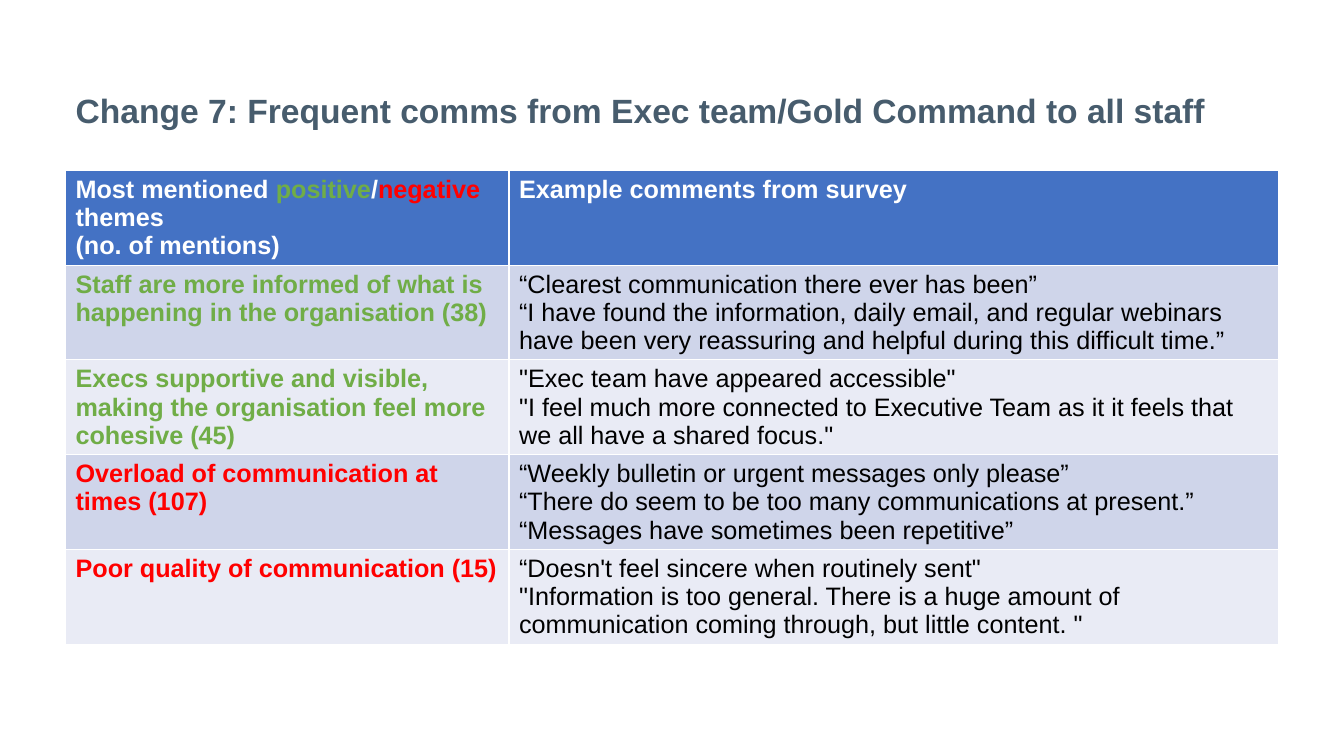
import pptx
import pptx.util
import pptx.dml.color
import pptx.enum.text

Pt = pptx.util.Pt


def color(value):
    return pptx.dml.color.RGBColor.from_string(value)


WHITE, BLACK, GREEN, RED = "FFFFFF", "000000", "70AD47", "FF0000"
HEADER_FILL, BAND_FILLS = "4472C4", ["CFD5EA", "E9EBF5"]

presentation = pptx.Presentation()
presentation.slide_width = Pt(960)
presentation.slide_height = Pt(540)
slide = presentation.slides.add_slide(presentation.slide_layouts[5])

title = slide.shapes.title
title.left, title.top, title.width, title.height = Pt(46.8), Pt(42.5), Pt(866.2), Pt(104.4)
title.text_frame.text = "Change 7: Frequent comms from Exec team/Gold Command to all staff"
title.text_frame.vertical_anchor = pptx.enum.text.MSO_ANCHOR.MIDDLE
title.text_frame.margin_bottom = Pt(32)
paragraph = title.text_frame.paragraphs[0]
paragraph.alignment = pptx.enum.text.PP_ALIGN.LEFT
paragraph.line_spacing = 0.9
paragraph.font.name = "Arial"
paragraph.font.size = Pt(24)
paragraph.font.bold = True
paragraph.font.color.rgb = color("475C6D")

header_theme = [
    [("Most mentioned ", WHITE), ("positive", GREEN), ("/", WHITE), ("negative", RED), (" themes", WHITE)],
    [("(no. of mentions)", WHITE)],
]
header_comments = [[("Example comments from survey", WHITE)]]

themes = [
    ("Staff are more informed of what is happening in the organisation (38)", GREEN, [
        "“Clearest communication there ever has been”",
        "“I have found the information, daily email, and regular webinars have been very reassuring and helpful during this difficult time.”",
    ]),
    ("Execs supportive and visible, making the organisation feel more cohesive (45)", GREEN, [
        '"Exec team have appeared accessible"',
        '"I feel much more connected to Executive Team as it it feels that we all have a shared focus."',
    ]),
    ("Overload of communication at times (107)", RED, [
        "“Weekly bulletin or urgent messages only please”",
        "“There do seem to be too many communications at present.”",
        "“Messages have sometimes been repetitive”",
    ]),
    ("Poor quality of communication (15)", RED, [
        "“Doesn't feel sincere when routinely sent\"",
        '"Information is too general. There is a huge amount of communication coming through, but little content. "',
    ]),
]

rows = [(header_theme, header_comments)]
for theme, theme_color, comments in themes:
    rows.append(([[(theme, theme_color)]], [[(comment, BLACK)] for comment in comments]))

table = slide.shapes.add_table(len(rows), 2, Pt(46.8), Pt(121.7), Pt(866.2), Pt(67.6 * len(rows))).table
table.columns[0].width = Pt(316.8)
table.columns[1].width = Pt(549.4)

for row_index, row in enumerate(rows):
    for column_index, lines in enumerate(row):
        cell = table.cell(row_index, column_index)
        cell.fill.solid()
        cell.fill.fore_color.rgb = color(BAND_FILLS[(row_index - 1) % 2] if row_index else HEADER_FILL)
        for line_index, line in enumerate(lines):
            if line_index:
                paragraph = cell.text_frame.add_paragraph()
            else:
                paragraph = cell.text_frame.paragraphs[0]
            paragraph.font.name = "Arial"
            paragraph.font.size = Pt(18)
            paragraph.font.bold = row_index == 0 or column_index == 0
            for text, text_color in line:
                run = paragraph.add_run()
                run.text = text
                run.font.color.rgb = color(text_color)

presentation.save("out.pptx")
